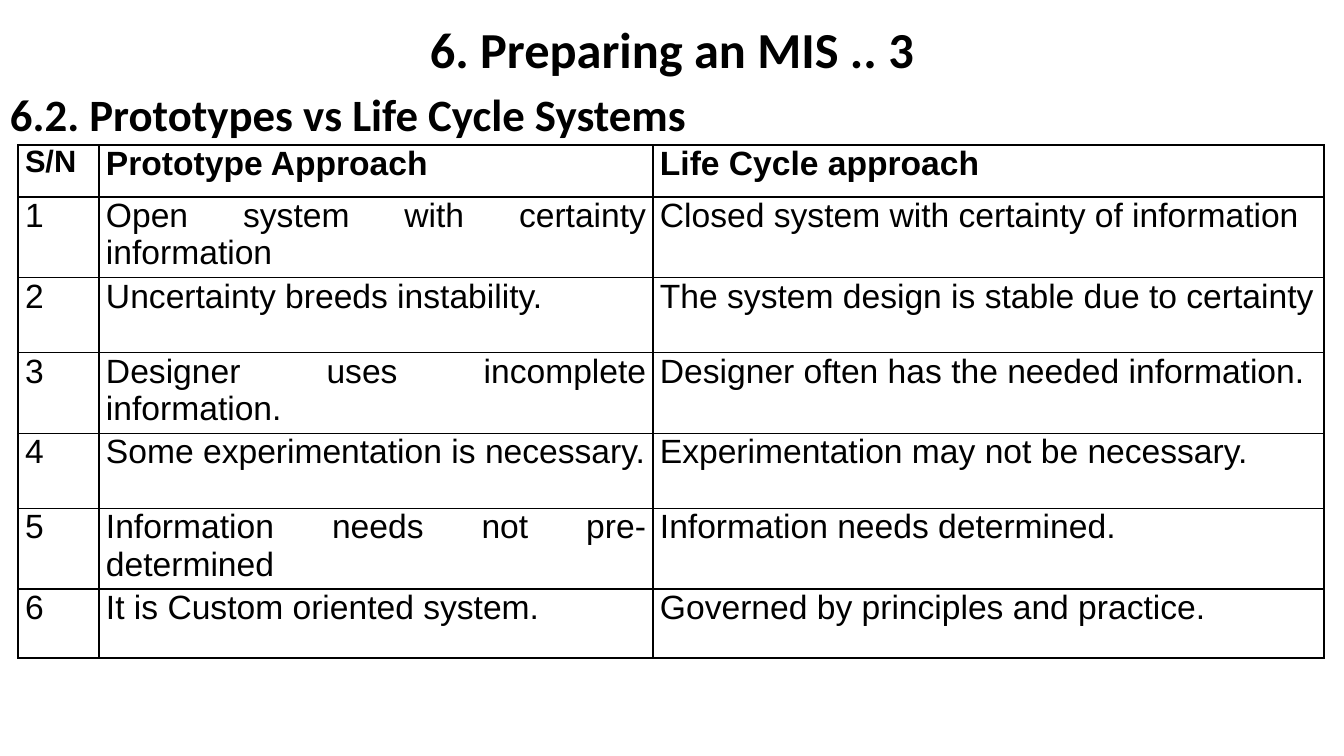
import pptx
import pptx.dml.color
import pptx.enum.text
import pptx.oxml
import pptx.util
import lxml.etree

EMU_PER_INCH = 914400
PX_PER_INCH = 100.8
BLACK = "000000"
COLUMN_WIDTHS = [81, 554, 671]
ROW_HEIGHTS = [52] + [75] * 5 + [69]
HEADINGS = ["S/N", "Prototype Approach", "Life Cycle approach"]
COMPARISONS = [
    ("Open system with certainty information", "Closed system with certainty of information"),
    ("Uncertainty breeds instability.", "The system design is stable due to certainty"),
    ("Designer uses incomplete information.", "Designer often has the needed information."),
    ("Some experimentation is necessary.", "Experimentation may not be necessary."),
    ("Information needs not pre-determined", "Information needs determined."),
    ("It is Custom oriented system.", "Governed by principles and practice."),
]
ALIGN = pptx.enum.text.PP_ALIGN
ANCHOR = pptx.enum.text.MSO_ANCHOR


def px(length):
    """Turn a length in px into EMU."""
    return pptx.util.Emu(round(length * EMU_PER_INCH / PX_PER_INCH))


def color(value):
    """Turn a hex string into a colour."""
    return pptx.dml.color.RGBColor.from_string(value)


def write(para, text, size, face, bold, align):
    """Fill a paragraph with text in one font."""
    para.text = text
    para.alignment = align
    para.font.size = pptx.util.Pt(size)
    para.font.name = face
    para.font.bold = bold
    para.font.color.rgb = color(BLACK)


def add_heading(page, text, top, height, size, align, anchor, space_before):
    """Add a bold heading across the full width of the page."""
    box = page.shapes.add_textbox(0, px(top), px(1344), px(height))
    frame = box.text_frame
    frame.word_wrap = True
    frame.vertical_anchor = anchor
    para = frame.paragraphs[0]
    write(para, text, size, "Calibri", True, align)
    para.line_spacing = 0.9
    para.space_before = pptx.util.Pt(space_before)


def add_borders(cell):
    """Draw a thin black line on each side of a cell."""
    properties = cell._tc.get_or_add_tcPr()
    for position, side in enumerate(("lnL", "lnR", "lnT", "lnB")):
        line = lxml.etree.Element(pptx.oxml.ns.qn(f"a:{side}"), w=str(pptx.util.Pt(1)))
        fill = lxml.etree.SubElement(line, pptx.oxml.ns.qn("a:solidFill"))
        lxml.etree.SubElement(fill, pptx.oxml.ns.qn("a:srgbClr"), val=BLACK)
        properties.insert(position, line)


def fill_cell(cell, text, size, bold):
    """Write one justified table cell without a fill."""
    cell.margin_left = cell.margin_right = px(7)
    cell.margin_top = cell.margin_bottom = 0
    para = cell.text_frame.paragraphs[0]
    write(para, text, size, "Arial", bold, ALIGN.JUSTIFY)
    para.space_after = pptx.util.Pt(0.6)
    cell.fill.background()
    add_borders(cell)


def add_comparison(page, left, top):
    """Add the table that compares both approaches."""
    rows = [HEADINGS] + [(str(number), *pair) for number, pair in enumerate(COMPARISONS, 1)]
    frame = page.shapes.add_table(len(rows), len(HEADINGS), px(left), px(top),
                                  px(sum(COLUMN_WIDTHS)), px(sum(ROW_HEIGHTS)))
    table = frame.table
    table.first_row = table.horz_banding = False
    for column, width in zip(table.columns, COLUMN_WIDTHS):
        column.width = px(width)
    for row, height, texts in zip(table.rows, ROW_HEIGHTS, rows):
        row.height = px(height)
        for cell, text in zip(row.cells, texts):
            fill_cell(cell, text, 22 if text == "S/N" else 24, texts is HEADINGS)


def main():
    """Build and save the deck."""
    deck = pptx.Presentation()
    deck.slide_width, deck.slide_height = px(1344), px(756)
    page = deck.slides.add_slide(deck.slide_layouts[6])
    add_heading(page, "6. Preparing an MIS .. 3", -4, 88, 36, ALIGN.CENTER, ANCHOR.BOTTOM, 0)
    add_heading(page, "6.2. Prototypes vs Life Cycle Systems", 88, 668, 32,
                ALIGN.LEFT, ANCHOR.TOP, 10)
    add_comparison(page, 18, 145)
    deck.save("out.pptx")


if __name__ == "__main__":
    main()
